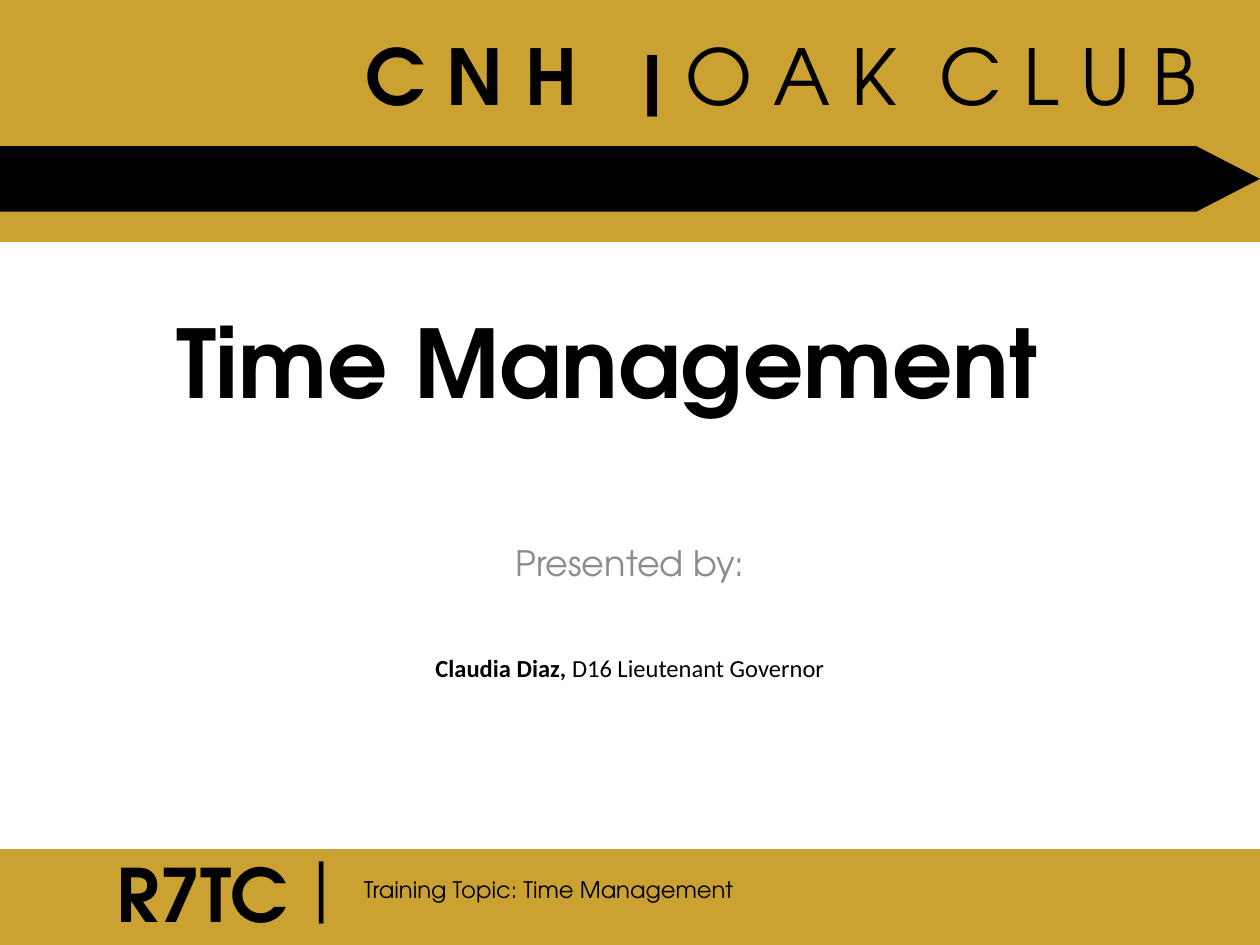
"""Build the title slide of a club training session on time management."""
from typing import NamedTuple

from pptx import Presentation
from pptx.dml.color import RGBColor
from pptx.enum.shapes import MSO_SHAPE as Shape
from pptx.enum.text import MSO_ANCHOR as Anchor, PP_ALIGN as Align
from pptx.util import Inches, Pt

GOLD = RGBColor(0xCB, 0xA2, 0x31)
BLACK = RGBColor(0, 0, 0)
GREY = RGBColor(0x8C, 0x8C, 0x8C)
HEAD = "TeX Gyre Adventor"
BODY = "Calibri"


class Box(NamedTuple):
    left: float
    top: float
    width: float
    height: float


class Band(NamedTuple):
    kind: Shape
    box: Box
    color: RGBColor


class Run(NamedTuple):
    text: str
    bold: bool = False
    gap: float = 0


BANDS = [
    Band(Shape.RECTANGLE, Box(0, 0, 10, 1.92), GOLD),
    Band(Shape.PENTAGON, Box(0, 1.16, 10, 0.52), BLACK),
    Band(Shape.RECTANGLE, Box(0, 6.74, 10, 0.76), GOLD),
]


def add_band(slide, band: Band) -> None:
    shape = slide.shapes.add_shape(band.kind, *map(Inches, band.box))
    shape.shadow.inherit = False
    shape.fill.solid()
    shape.fill.fore_color.rgb = band.color
    shape.line.fill.background()
    if band.kind == Shape.PENTAGON:
        shape.adjustments[0] = 0.97


def add_text(slide, box: Box, *runs: Run, size: float, font: str = HEAD,
             color: RGBColor = BLACK, align: Align = Align.LEFT,
             anchor: Anchor = Anchor.TOP, before: float = 0,
             wrap: bool = True) -> None:
    frame = slide.shapes.add_textbox(*map(Inches, box)).text_frame
    frame.word_wrap = wrap
    frame.vertical_anchor = anchor
    para = frame.paragraphs[0]
    para.alignment = align
    para.space_before = Pt(before)
    for item in runs:
        run = para.add_run()
        run.text = item.text
        run.font.name = font
        run.font.size = Pt(size)
        run.font.bold = item.bold
        run.font.color.rgb = color
        if item.gap:
            run._r.get_or_add_rPr().set("spc", str(int(item.gap * 100)))


def main() -> None:
    deck = Presentation()
    deck.slide_width, deck.slide_height = Inches(10), Inches(7.5)
    slide = deck.slides.add_slide(deck.slide_layouts[6])
    for band in BANDS:
        add_band(slide, band)
    add_text(slide, Box(1.95, -0.21, 8.5, 1.61),
             Run("C N H", True), Run(" ", True, 24), Run("| ", True),
             Run("O A K"), Run(" ", gap=12), Run("C L U B"),
             size=44, align=Align.CENTER, anchor=Anchor.MIDDLE)
    add_text(slide, Box(1.3, 2.36, 7.79, 1.01),
             Run("Time Management", True), size=54)
    add_text(slide, Box(1.5, 4.25, 7, 0.8), Run("Presented by:"),
             size=20, color=GREY, align=Align.CENTER, before=4)
    add_text(slide, Box(1.5, 5.13, 7, 1.25), Run("Claudia Diaz, ", True),
             Run("D16 Lieutenant Governor"), size=14, font=BODY,
             align=Align.CENTER, before=2.8)
    add_text(slide, Box(0.83, 6.69, 2, 0.81), Run("R7TC", True), size=42)
    add_text(slide, Box(2.33, 6.64, 0.46, 0.77), Run("|"),
             size=40, font=BODY, wrap=False)
    add_text(slide, Box(2.79, 6.9, 7.17, 0.32),
             Run("Training Topic: Time Management"), size=13)
    deck.save("out.pptx")


if __name__ == "__main__":
    main()
